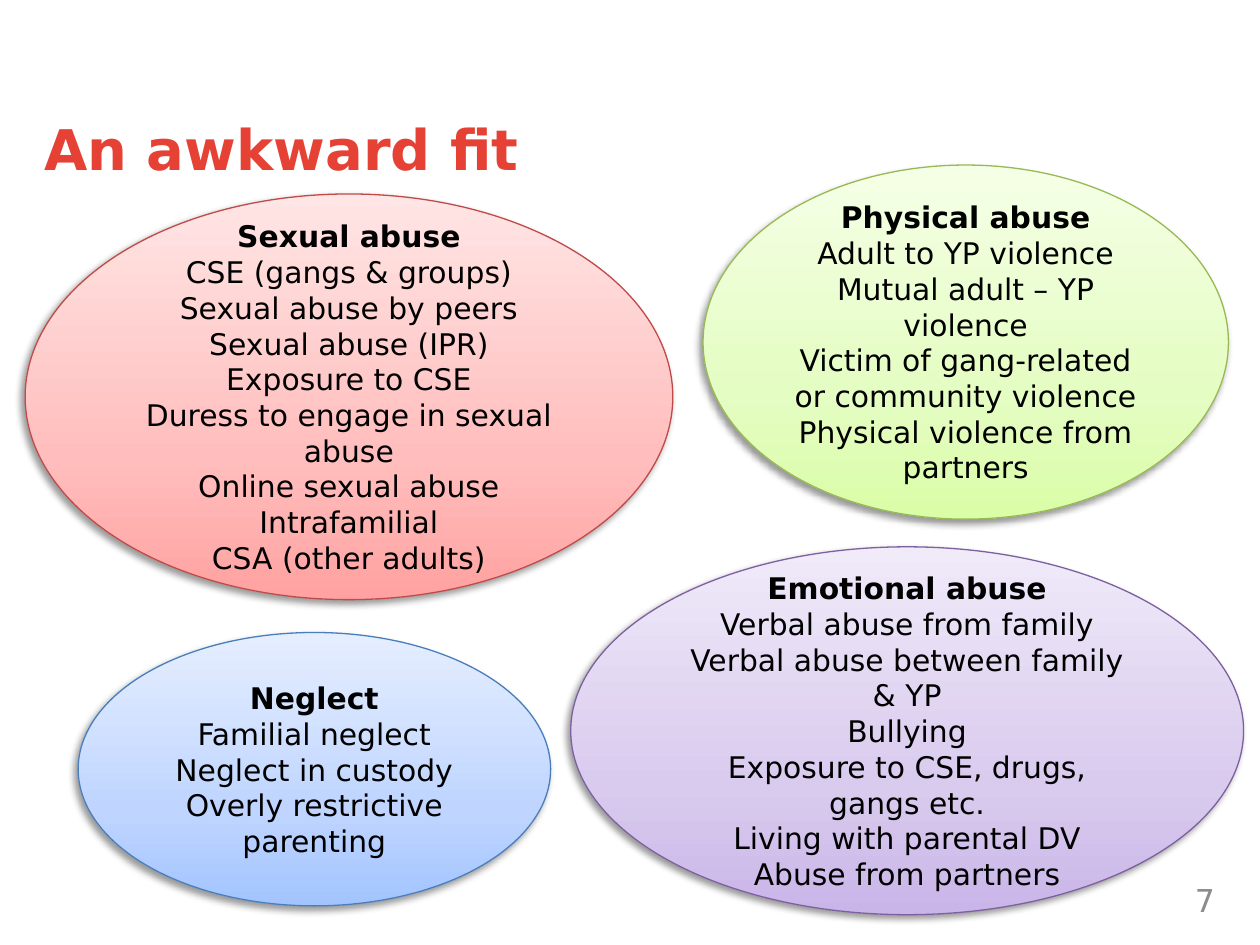
from copy import deepcopy

from lxml import etree
from pptx import Presentation
from pptx import util as u
from pptx.dml.color import RGBColor
from pptx.enum import shapes, text
from pptx.oxml import ns

FONT = "DejaVu Sans"
WIDTH, HEIGHT = u.Inches(10), u.Inches(7.5)
STOPS = (0, 0.65, 1)

TOPICS = [
    ((2, 20.53, 51.4, 42.93), "BE4B48", ("FFE5E5", "FFBEBD", "FFA2A1"), [
        "Sexual abuse", "CSE (gangs & groups)", "Sexual abuse by peers",
        "Sexual abuse (IPR)", "Exposure to CSE",
        "Duress to engage in sexual abuse", "Online sexual abuse",
        "Intrafamilial", "CSA (other adults)"]),
    ((55.8, 17.47, 41.7, 37.47), "98B954", ("F5FFE6", "E4FDC2", "DAFDA7"), [
        "Physical abuse", "Adult to YP violence", "Mutual adult – YP violence",
        "Victim of gang-related or community violence",
        "Physical violence from partners"]),
    ((6.2, 66.93, 37.5, 28.93), "4A7EBB", ("E5EEFF", "BFD5FF", "A3C4FF"), [
        "Neglect", "Familial neglect", "Neglect in custody",
        "Overly restrictive parenting"]),
    ((45.3, 57.87, 53.4, 38.93), "7D60A0", ("F0EAF9", "D9CBEE", "C9B5E8"), [
        "Emotional abuse", "Verbal abuse from family",
        "Verbal abuse between family & YP", "Bullying",
        "Exposure to CSE, drugs, gangs etc.", "Living with parental DV",
        "Abuse from partners"]),
]


def color(value):
    return RGBColor.from_string(value)


def area(left, top, width, height):
    return (int(WIDTH * left / 100), int(HEIGHT * top / 100),
            int(WIDTH * width / 100), int(HEIGHT * height / 100))


def write(para, words, size=17, ink="000000", bold=False,
          align=text.PP_ALIGN.CENTER, spacing=1.0):
    para.alignment = align
    para.line_spacing = spacing
    para.space_before = u.Pt(0)
    span = para.add_run()
    span.text = words
    span.font.name = FONT
    span.font.size = u.Pt(size)
    span.font.bold = bold
    span.font.color.rgb = color(ink)


def shade(shape, tints):
    shape.fill.gradient()
    shape.fill.gradient_angle = 270
    stop_list = shape._element.spPr.find(".//" + ns.qn("a:gsLst"))
    stop_list.insert(1, deepcopy(stop_list[0]))
    for stop, position, tint in zip(shape.fill.gradient_stops, STOPS, tints):
        stop.position = position
        stop.color.rgb = color(tint)


def cast_shadow(shape):
    shape.shadow.inherit = False
    effects = shape._element.spPr.find(ns.qn("a:effectLst"))
    shadow = etree.SubElement(
        effects, ns.qn("a:outerShdw"), blurRad=str(u.Pt(4)),
        dist=str(u.Pt(3)), dir=str(135 * 60000), rotWithShape="0")
    black = etree.SubElement(shadow, ns.qn("a:srgbClr"), val="000000")
    etree.SubElement(black, ns.qn("a:alpha"), val="40000")


def add_title(page, box, words):
    title = page.shapes.title
    title.left, title.top, title.width, title.height = area(*box)
    frame = title.text_frame
    frame.auto_size = text.MSO_AUTO_SIZE.NONE
    frame.vertical_anchor = text.MSO_ANCHOR.TOP
    write(frame.paragraphs[0], words, size=32, ink="E64135", bold=True,
          align=text.PP_ALIGN.LEFT, spacing=0.9)


def add_topic(page, box, outline, tints, lines):
    oval = page.shapes.add_shape(shapes.MSO_SHAPE.OVAL, *area(*box))
    shade(oval, tints)
    oval.line.color.rgb = color(outline)
    oval.line.width = u.Pt(0.75)
    cast_shadow(oval)
    frame = oval.text_frame
    frame.word_wrap = True
    frame.vertical_anchor = text.MSO_ANCHOR.MIDDLE
    for index, line in enumerate(lines):
        para = frame.add_paragraph() if index else frame.paragraphs[0]
        write(para, line, bold=index == 0)


def add_page_number(page, box, number):
    frame = page.shapes.add_textbox(*area(*box)).text_frame
    frame.word_wrap = True
    frame.vertical_anchor = text.MSO_ANCHOR.MIDDLE
    write(frame.paragraphs[0], number, size=18, ink="8C8C8C",
          align=text.PP_ALIGN.RIGHT)


def main():
    deck = Presentation()
    deck.slide_width, deck.slide_height = WIDTH, HEIGHT
    page = deck.slides.add_slide(deck.slide_layouts.get_by_name("Title Only"))
    add_title(page, (2.5, 12.27, 95, 16.53), "An awkward fit")
    for topic in TOPICS:
        add_topic(page, *topic)
    add_page_number(page, (74.1, 92.53, 23.3, 5.33), "7")
    deck.save("out.pptx")


if __name__ == "__main__":
    main()
